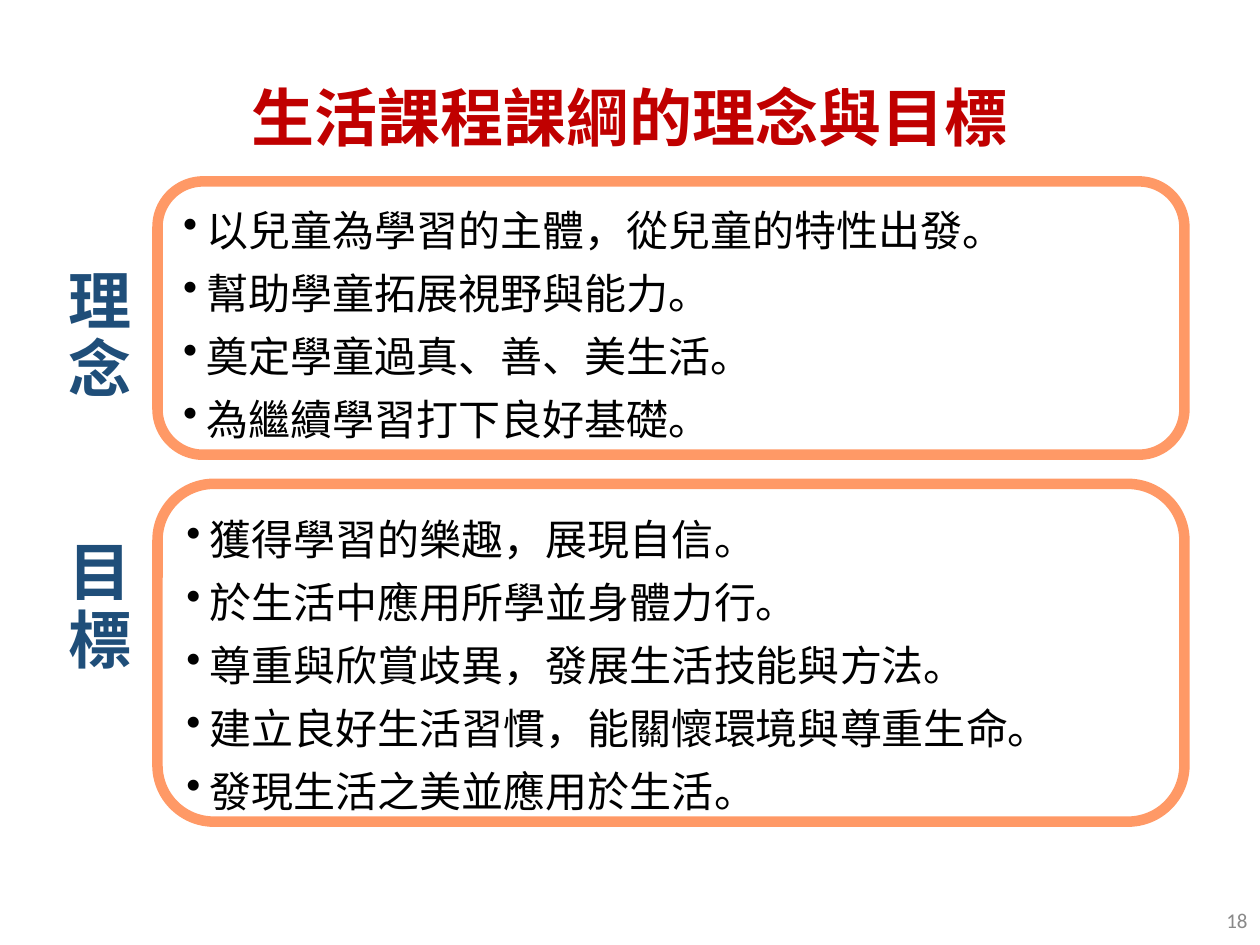
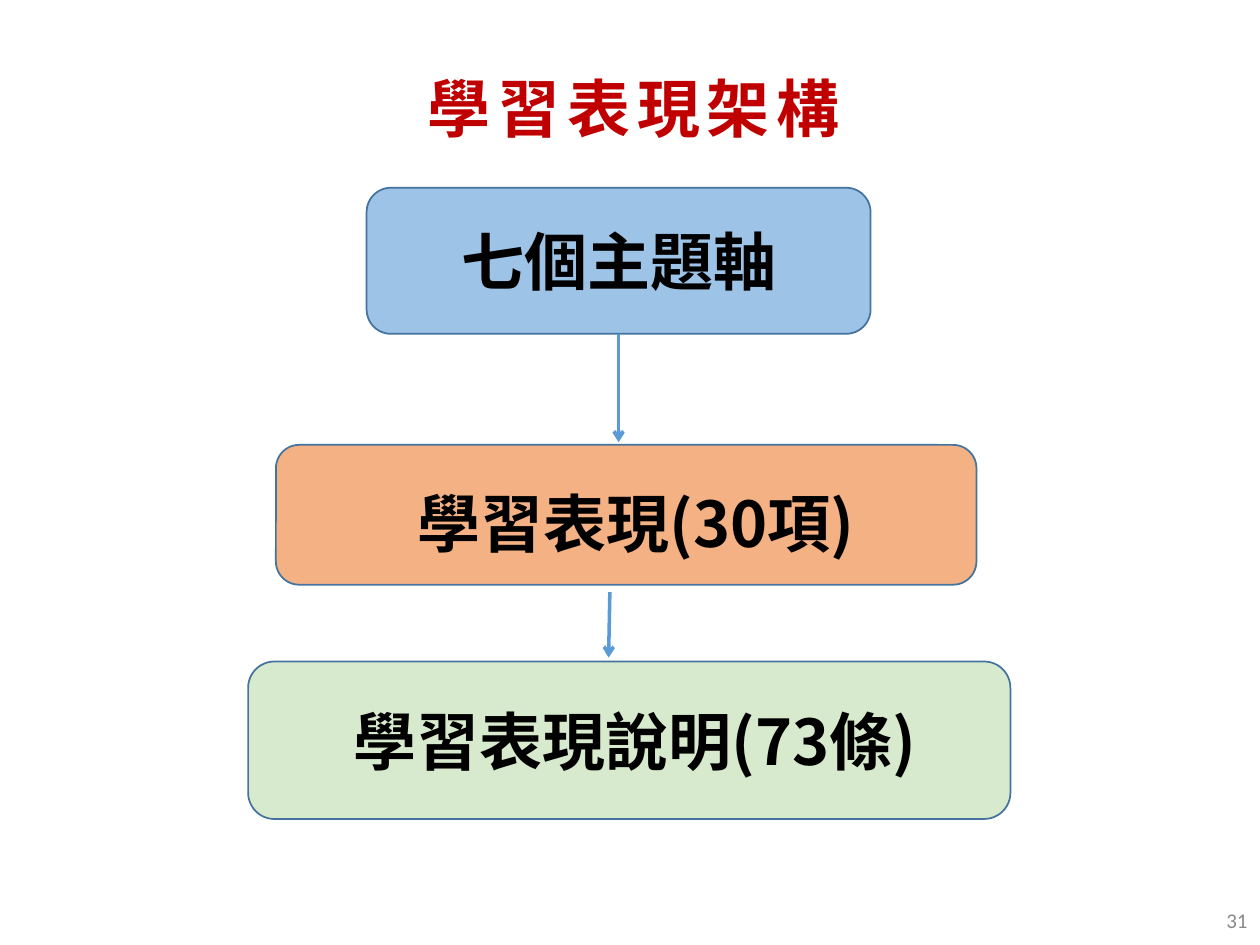
import dataclasses
import typing

import lxml.etree
import pptx
import pptx.dml.color
import pptx.enum.shapes
import pptx.enum.text
import pptx.oxml.ns
import pptx.util

Pt = pptx.util.Pt
RGB = pptx.dml.color.RGBColor.from_string
Kind = pptx.enum.shapes.MSO_SHAPE
Align = pptx.enum.text.PP_ALIGN
Mid = pptx.enum.text.MSO_ANCHOR.MIDDLE
qn = pptx.oxml.ns.qn

HEX = {
    "white": "FFFFFF", "black": "000000", "red": "C00000", "navy": "1F4E79",
    "gray": "898989", "rim": "FF9966", "edge": "43739E", "arrow": "5B9BD5",
    "blue": "9DC3E6", "orange": "F4B183", "green": "C5E0B4",
}
CJK = "Noto Sans CJK SC"
TITLE = {"name": CJK, "size": Pt(36), "bold": True, "color": "red"}
LABEL = TITLE | {"color": "navy"}
STEP = TITLE | {"color": "black"}
BODY = STEP | {"size": Pt(24), "bold": False}
PAGE = {"name": "Calibri", "size": Pt(12), "color": "gray"}

Box = tuple[float, float, float, float]


@dataclasses.dataclass
class Panel:
    label: str
    tag: Box
    box: Box
    top: float
    lines: list[str]


@dataclasses.dataclass
class Step:
    text: str
    box: Box
    fill: str
    left: float = 7.2
    top: float = 3.6
    alpha: int = 100


PANELS = [
    Panel("理念", (24.5, 142, 65.5, 103), (90, 103.7, 586.8, 156.2), 9.6, [
        "以兒童為學習的主體，從兒童的特性出發。",
        "幫助學童拓展視野與能力。",
        "奠定學童過真、善、美生活。",
        "為繼續學習打下良好基礎。",
    ]),
    Panel("目標", (24.5, 296.6, 65.5, 103), (90, 276.5, 586.8, 193), 15.6, [
        "獲得學習的樂趣，展現自信。",
        "於生活中應用所學並身體力行。",
        "尊重與欣賞歧異，發展生活技能與方法。",
        "建立良好生活習慣，能關懷環境與尊重生命。",
        "發現生活之美並應用於生活。",
    ]),
]
STEPS = [
    Step("七個主題軸", (209.5, 107.3, 288, 83.5), "blue"),
    Step("學習表現(30項)", (157.7, 254.2, 400.3, 79.9), "orange", 18, 11.6),
    Step("學習表現說明(73條)", (141.8, 378, 435.6, 90), "green", 13.5, alpha=66),
]


def pts(box: Box) -> list[int]:
    return [Pt(n) for n in box]


def add_run(para: typing.Any, text: str, form: dict, gap: int = 0) -> None:
    """Add text with the given format; gap is the letter spacing in points."""
    run = para.add_run()
    run.text = text
    for key, val in form.items():
        if key == "color":
            run.font.color.rgb = RGB(HEX[val])
        else:
            setattr(run.font, key, val)
    props = run._r.get_or_add_rPr()
    lxml.etree.SubElement(props, qn("a:ea")).set("typeface", form["name"])
    if gap:
        props.set("spc", str(gap * 100))


def set_frame(frame: typing.Any, side: float = 7.2, edge: float = 3.6) -> None:
    form = {
        "word_wrap": True, "vertical_anchor": Mid,
        "margin_left": Pt(side), "margin_right": Pt(side),
        "margin_top": Pt(edge), "margin_bottom": Pt(edge),
    }
    for key, val in form.items():
        setattr(frame, key, val)


def add_text(slide: typing.Any, box: Box, text: str, form: dict,
             align: Align) -> typing.Any:
    frame = slide.shapes.add_textbox(*pts(box)).text_frame
    set_frame(frame)
    frame.paragraphs[0].alignment = align
    add_run(frame.paragraphs[0], text, form)
    return frame


def add_slide(deck: typing.Any, title: str, box: Box, page: int,
              gap: int = 0) -> typing.Any:
    slide = deck.slides.add_slide(deck.slide_layouts[5])
    head = slide.shapes.title
    head.left, head.top, head.width, head.height = pts(box)
    set_frame(head.text_frame)
    para = head.text_frame.paragraphs[0]
    para.alignment = Align.CENTER
    add_run(para, title, TITLE, gap)
    add_text(slide, (558, 511.2, 162, 28.8), str(page), PAGE, Align.RIGHT)
    return slide


def add_block(slide: typing.Any, kind: Kind, box: Box, fill: str, line: str,
              width: float) -> typing.Any:
    shape = slide.shapes.add_shape(kind, *pts(box))
    shape.shadow.inherit = False
    shape.fill.solid()
    shape.fill.fore_color.rgb = RGB(HEX[fill])
    shape.line.color.rgb = RGB(HEX[line])
    shape.line.width = Pt(width)
    set_frame(shape.text_frame)
    return shape


def add_panel(slide: typing.Any, panel: Panel) -> None:
    frame = add_block(slide, Kind.FLOWCHART_ALTERNATE_PROCESS, panel.box,
                      "white", "rim", 6).text_frame
    frame.margin_top = Pt(panel.top)
    for i, line in enumerate(panel.lines):
        para = frame.add_paragraph() if i else frame.paragraphs[0]
        props = para._p.get_or_add_pPr()
        props.set("marL", str(Pt(13.5)))
        props.set("indent", str(-Pt(13.5)))
        lxml.etree.SubElement(props, qn("a:buChar")).set("char", "•")
        para.alignment = Align.LEFT
        para.line_spacing = Pt(30)
        para.space_before = Pt(6 if i else 0)
        add_run(para, line, BODY)
    tag = add_text(slide, panel.tag, panel.label, LABEL, Align.CENTER)
    set_frame(tag, 10.8, 5)
    tag.paragraphs[0].line_spacing = 0.9


def add_step(slide: typing.Any, step: Step) -> typing.Any:
    shape = add_block(slide, Kind.ROUNDED_RECTANGLE, step.box, step.fill,
                      "edge", 1)
    if step.alpha < 100:
        tint = shape._element.spPr.find(".//" + qn("a:srgbClr"))
        alpha = lxml.etree.SubElement(tint, qn("a:alpha"))
        alpha.set("val", str(step.alpha * 1000))
    frame = shape.text_frame
    frame.margin_left, frame.margin_top = Pt(step.left), Pt(step.top)
    frame.paragraphs[0].alignment = Align.CENTER
    add_run(frame.paragraphs[0], step.text, STEP)
    return shape


def add_arrow(slide: typing.Any, ends: Box) -> typing.Any:
    link = slide.shapes.add_connector(
        pptx.enum.shapes.MSO_CONNECTOR.STRAIGHT, *pts(ends))
    link.line.color.rgb = RGB(HEX["arrow"])
    link.line.width = Pt(2)
    tip = lxml.etree.SubElement(link.line._get_or_add_ln(), qn("a:tailEnd"))
    tip.set("type", "arrow")
    lxml.etree.SubElement(link._element.spPr, qn("a:effectLst"))
    return link


def main() -> None:
    deck = pptx.Presentation()
    deck.slide_width, deck.slide_height = Pt(720), Pt(540)

    goals = add_slide(deck, "生活課程課綱的理念與目標",
                      (49.7, 14.4, 620.6, 104.4), 18)
    for panel in PANELS:
        add_panel(goals, panel)

    chart = add_slide(deck, "學習表現架構", (22.3, 31, 679.7, 61.2), 31, gap=4)
    blocks = [add_step(chart, step) for step in STEPS]
    link = add_arrow(chart, (353.5, 190.8, 353.5, 252.7))
    link.begin_connect(blocks[0], 2)
    add_arrow(chart, (348.5, 338.4, 347.8, 375.8))

    deck.save("out.pptx")


if __name__ == "__main__":
    main()
